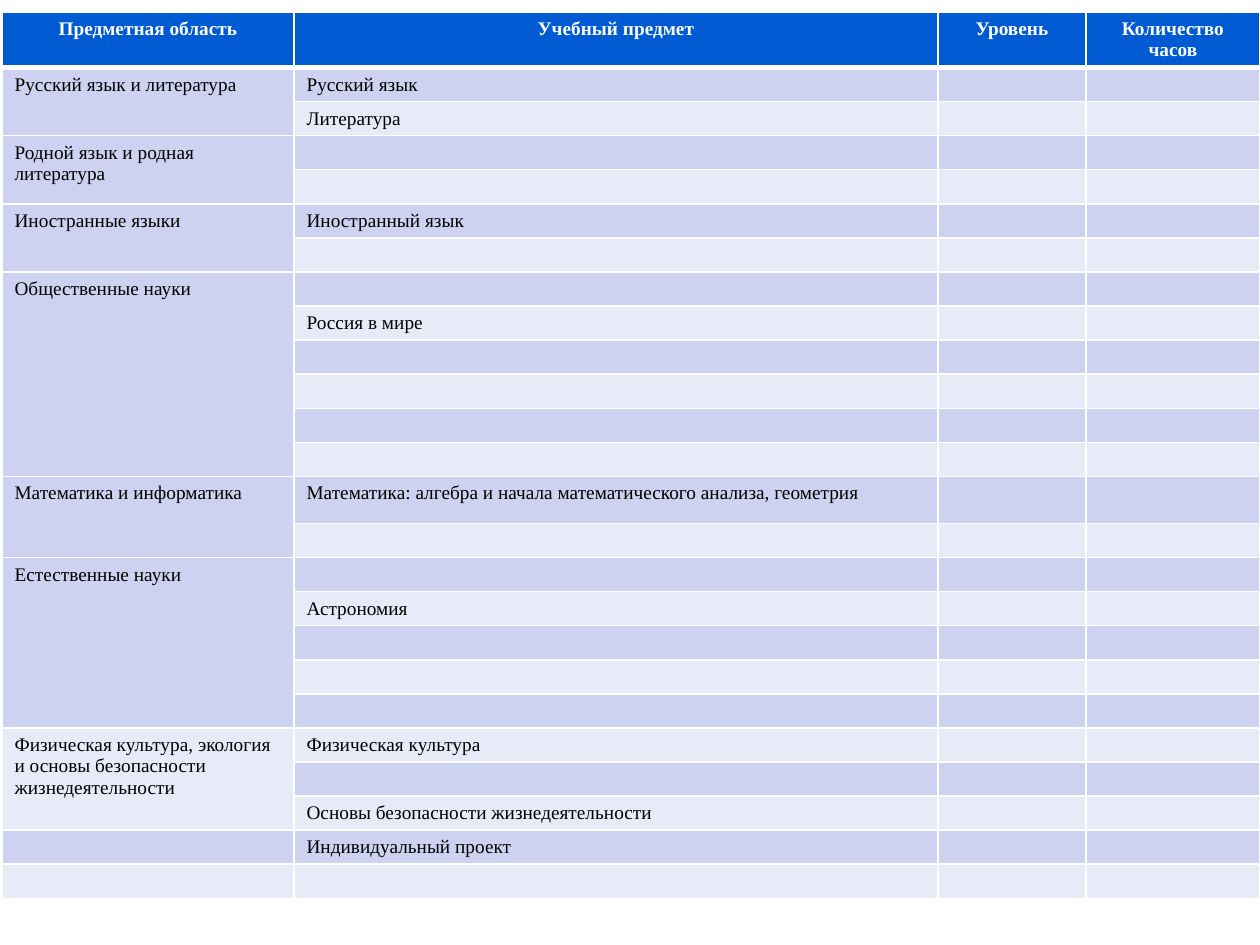
import pptx
import pptx.util
import pptx.dml.color
import pptx.enum.text
import pptx.oxml.ns
import lxml.etree

SCALE = 914400 / 126
FONT = "Times New Roman"
SIZE = 11
HEX = {"head": "005BD3", "dark": "CCD2EF", "light": "E7EAF7",
       "white": "FFFFFF", "black": "000000"}
COLS = [292, 644, 148, 174]
HEADS = ["Предметная область", "Учебный предмет", "Уровень", "Количество часов"]
AREAS = [
    ("Русский язык и литература", ["Русский язык", "Литература"]),
    ("Родной язык и родная литература", ["", ""]),
    ("Иностранные языки", ["Иностранный язык", ""]),
    ("Общественные науки", ["", "Россия в мире", "", "", "", ""]),
    ("Математика и информатика",
     ["Математика: алгебра и начала математического анализа, геометрия", ""]),
    ("Естественные науки", ["", "Астрономия", "", "", ""]),
    ("Физическая культура, экология и основы безопасности жизнедеятельности",
     ["Физическая культура", "", "Основы безопасности жизнедеятельности"]),
    ("", ["Индивидуальный проект"]),
    ("", [""]),
]
HEAD_H, ROW_H, TALL_H = 55, 34, 47
TALL = "Математика:"


def px(n):
    return pptx.util.Emu(round(n * SCALE))


def color(name):
    return pptx.dml.color.RGBColor.from_string(HEX[name])


def add_node(root, tag, **attrs):
    return lxml.etree.SubElement(root, pptx.oxml.ns.qn(tag), **attrs)


def edge(cell, row):
    props = cell._tc.get_or_add_tcPr()
    for side in "LRTB":
        thick = (row, side) in ((0, "B"), (1, "T"))
        width = pptx.util.Pt(3 if thick else 1)
        line = add_node(props, "a:ln" + side, w=str(width))
        fill = add_node(line, "a:solidFill")
        add_node(fill, "a:srgbClr", val=HEX["white"])


def style(cell, row):
    head = row == 0
    edge(cell, row)
    cell.fill.solid()
    cell.fill.fore_color.rgb = color("head" if head else "dark" if row % 2 else "light")
    para = cell.text_frame.paragraphs[0]
    if head:
        para.alignment = pptx.enum.text.PP_ALIGN.CENTER
    for run in para.runs:
        run.font.name = FONT
        run.font.size = pptx.util.Pt(SIZE)
        run.font.bold = head
        run.font.color.rgb = color("white" if head else "black")
    if not para.runs:
        end = add_node(para._p, "a:endParaRPr", sz=str(SIZE * 100))
        add_node(end, "a:latin", typeface=FONT)


def add_plan(slide, left, top, width):
    rows = [HEADS]
    spans = []
    for area, items in AREAS:
        spans.append((len(rows), len(items)))
        rows += [[area if i == 0 else "", item, "", ""]
                 for i, item in enumerate(items)]
    highs = [HEAD_H] + [TALL_H if row[1].startswith(TALL) else ROW_H
                        for row in rows[1:]]
    table = slide.shapes.add_table(len(rows), len(COLS), px(left), px(top),
                                   px(width), px(sum(highs))).table
    for col, size in zip(table.columns, COLS):
        col.width = px(size * width / sum(COLS))
    for r, row in enumerate(rows):
        table.rows[r].height = px(highs[r])
        for c, text in enumerate(row):
            cell = table.cell(r, c)
            cell.text_frame.text = text
            style(cell, r)
    for start, count in spans:
        if count > 1:
            table.cell(start, 0).merge(table.cell(start + count - 1, 0))


def main():
    deck = pptx.Presentation()
    deck.slide_width, deck.slide_height = px(1260), px(945)
    slide = deck.slides.add_slide(deck.slide_layouts[6])
    add_plan(slide, 2, 12, 1258)
    deck.save("out.pptx")


if __name__ == "__main__":
    main()
